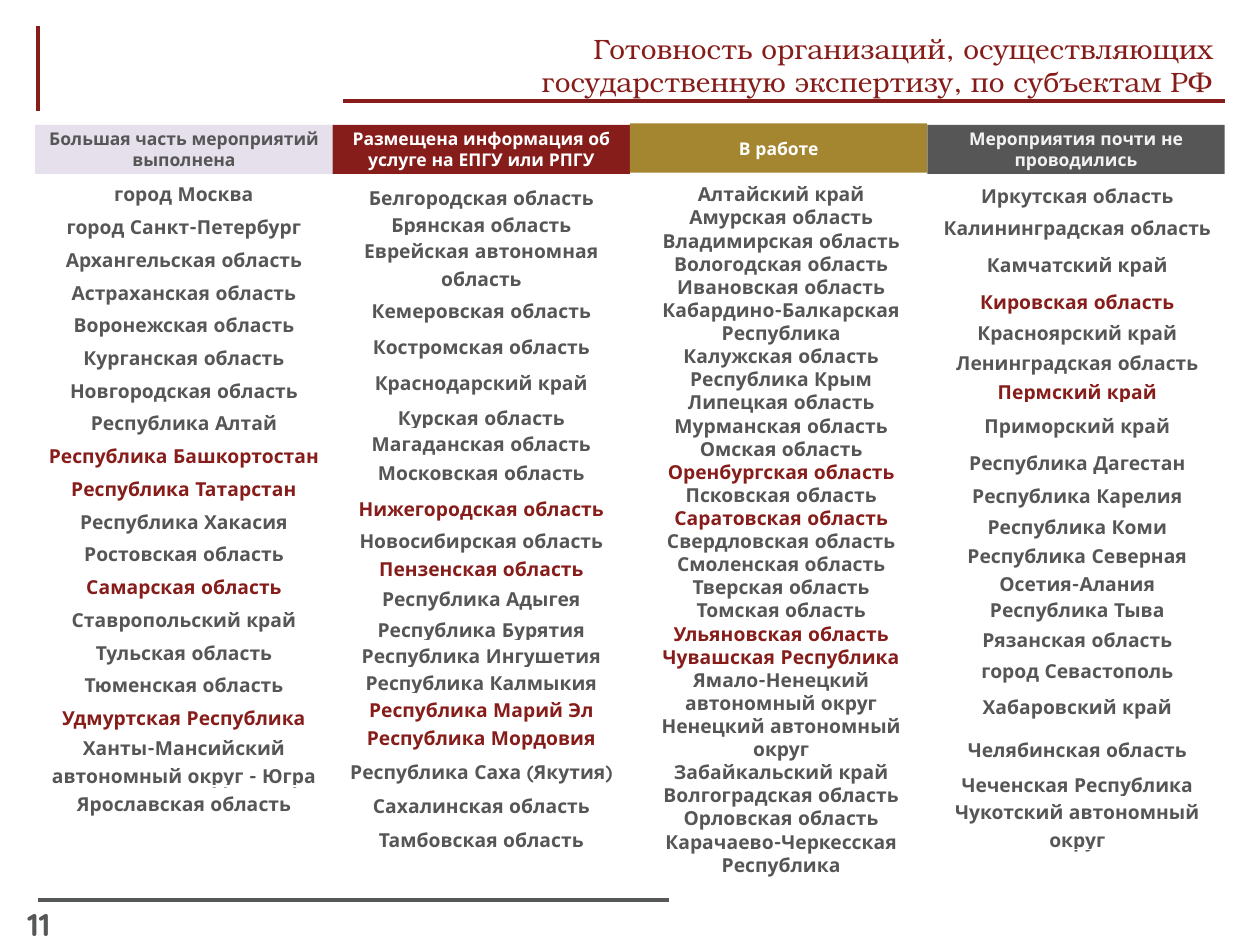
from dataclasses import dataclass

from lxml.etree import SubElement
from pptx import Presentation
from pptx.dml.color import RGBColor
from pptx.enum.shapes import MSO_CONNECTOR, MSO_SHAPE
from pptx.enum.text import MSO_ANCHOR, PP_ALIGN
from pptx.oxml.ns import qn
from pptx.util import Inches, Pt


@dataclass(frozen=True)
class Theme:
    red: str = "861D1A"
    gray: str = "575656"
    rule_gray: str = "565757"
    lilac: str = "E6E0EC"
    gold: str = "A3862F"
    white: str = "FFFFFF"
    pale: str = "F2F2F2"
    body_font: str = "Quicksand"
    title_font: str = "TeX Gyre Bonum"
    title_size: float = 16
    header_size: float = 10
    region_size: float = 11
    page_size: float = 18
    rule_width: float = 2.25


@dataclass(frozen=True)
class Rule:
    start: tuple[float, float]
    end: tuple[float, float]
    color: str


@dataclass(frozen=True)
class Header:
    label: str
    top: float
    fill: str
    color: str


@dataclass(frozen=True)
class RegionTable:
    left: float
    top: float
    side_inset: float
    heights: list[float]
    regions: list[str]


THEME = Theme()
LEFT, COLUMN, HEADER_HEIGHT = 0.28, 2.36, 0.39

RULES = [
    Rule((0.3, 0.21), (0.3, 0.88), THEME.red),
    Rule((0.3, 7.14), (5.31, 7.14), THEME.rule_gray),
    Rule((9.72, 0.8), (2.72, 0.8), THEME.red),
]
HEADERS = [
    Header("Большая часть мероприятий выполнена", 0.99, THEME.lilac, THEME.gray),
    Header("Размещена информация об услуге на ЕПГУ или РПГУ", 0.99, THEME.red, THEME.white),
    Header("В работе", 0.98, THEME.gold, THEME.white),
    Header("Мероприятия почти не проводились", 0.99, THEME.gray, THEME.pale),
]
HIGHLIGHTED = {
    "Республика Башкортостан", "Республика Татарстан", "Самарская область",
    "Удмуртская Республика", "Кировская область", "Пермский край",
    "Нижегородская область", "Пензенская область", "Республика Марий Эл",
    "Республика Мордовия", "Оренбургская область", "Саратовская область",
    "Ульяновская область", "Чувашская Республика",
}
MOSTLY_DONE = [
    "город Москва", "город Санкт-Петербург", "Архангельская область",
    "Астраханская область", "Воронежская область", "Курганская область",
    "Новгородская область", "Республика Алтай", "Республика Башкортостан",
    "Республика Татарстан", "Республика Хакасия", "Ростовская область",
    "Самарская область", "Ставропольский край", "Тульская область",
    "Тюменская область", "Удмуртская Республика",
    "Ханты-Мансийский автономный округ - Югра", "Ярославская область",
]
PUBLISHED = [
    "Белгородская область", "Брянская область", "Еврейская автономная область",
    "Кемеровская область", "Костромская область", "Краснодарский край",
    "Курская область", "Магаданская область", "Московская область",
    "Нижегородская область", "Новосибирская область", "Пензенская область",
    "Республика Адыгея", "Республика Бурятия", "Республика Ингушетия",
    "Республика Калмыкия", "Республика Марий Эл", "Республика Мордовия",
    "Республика Саха (Якутия)", "Сахалинская область", "Тамбовская область",
]
IN_PROGRESS = [
    "Алтайский край", "Амурская область", "Владимирская область",
    "Вологодская область", "Ивановская область", "Кабардино-Балкарская Республика",
    "Калужская область", "Республика Крым", "Липецкая область",
    "Мурманская область", "Омская область", "Оренбургская область",
    "Псковская область", "Саратовская область", "Свердловская область",
    "Смоленская область", "Тверская область", "Томская область",
    "Ульяновская область", "Чувашская Республика",
    "Ямало-Ненецкий автономный округ", "Ненецкий автономный округ",
    "Забайкальский край", "Волгоградская область", "Орловская область",
    "Карачаево-Черкесская Республика",
]
BARELY_STARTED = [
    "Иркутская область", "Калининградская область", "Камчатский край",
    "Кировская область", "Красноярский край", "Ленинградская область",
    "Пермский край", "Приморский край", "Республика Дагестан",
    "Республика Карелия", "Республика Коми", "Республика Северная Осетия-Алания",
    "Республика Тыва", "Рязанская область", "город Севастополь",
    "Хабаровский край", "Челябинская область", "Чеченская Республика",
    "Чукотский автономный округ",
]
TABLES = [
    RegionTable(LEFT, 1.4, 0.03, [0.26] * len(MOSTLY_DONE), MOSTLY_DONE),
    RegionTable(7.37, 1.41, 0.03,
                [0.27, 0.24, 0.34, 0.25, 0.24, 0.24, 0.08, 0.34, 0.25, 0.27,
                 0.23, 0.28, 0.24, 0.24, 0.24, 0.34, 0.34, 0.18, 0.34], BARELY_STARTED),
    RegionTable(2.64, 1.45, 0.02,
                [0.2, 0.2, 0.2, 0.33, 0.23, 0.34, 0.2, 0.2, 0.26, 0.3, 0.22,
                 0.22, 0.26, 0.2, 0.13, 0.2, 0.23, 0.22, 0.32, 0.2, 0.33], PUBLISHED),
]


def write(paragraph, text: str, size: float, color: str, align=PP_ALIGN.CENTER,
          font: str = THEME.body_font, bold: bool = True) -> None:
    paragraph.alignment = align
    run = paragraph.add_run()
    run.text = text
    for attribute, value in {"size": Pt(size), "name": font, "bold": bold}.items():
        setattr(run.font, attribute, value)
    run.font.color.rgb = RGBColor.from_string(color)


def write_region(paragraph, region: str) -> None:
    color = THEME.red if region in HIGHLIGHTED else THEME.gray
    write(paragraph, region, THEME.region_size, color)


def add_text_frame(slide, left: float, top: float, width: float, height: float):
    frame = slide.shapes.add_textbox(
        Inches(left), Inches(top), Inches(width), Inches(height)).text_frame
    frame.word_wrap = True
    return frame


def draw_rule(slide, rule: Rule) -> None:
    line = slide.shapes.add_connector(
        MSO_CONNECTOR.STRAIGHT, *map(Inches, rule.start + rule.end))
    line.line.color.rgb = RGBColor.from_string(rule.color)
    line.line.width = Pt(THEME.rule_width)
    SubElement(line._element.spPr, qn("a:effectLst"))


def draw_header(slide, column: int, header: Header) -> None:
    band = slide.shapes.add_shape(
        MSO_SHAPE.RECTANGLE, Inches(LEFT + column * COLUMN), Inches(header.top),
        Inches(COLUMN), Inches(HEADER_HEIGHT))
    band.shadow.inherit = False
    band.fill.solid()
    band.fill.fore_color.rgb = RGBColor.from_string(header.fill)
    band.line.fill.background()
    band.text_frame.word_wrap = True
    band.text_frame.vertical_anchor = MSO_ANCHOR.MIDDLE
    write(band.text_frame.paragraphs[0], header.label, THEME.header_size, header.color)


def draw_table(slide, content: RegionTable) -> None:
    table = slide.shapes.add_table(
        len(content.regions), 1, Inches(content.left), Inches(content.top),
        Inches(COLUMN), Inches(sum(content.heights))).table
    table.first_row = table.horz_banding = False
    cell_format = {
        "margin_left": Inches(content.side_inset), "margin_right": Inches(content.side_inset),
        "margin_top": 0, "margin_bottom": 0, "vertical_anchor": MSO_ANCHOR.MIDDLE,
    }
    for row, height, region in zip(table.rows, content.heights, content.regions):
        row.height = Inches(height)
        cell = row.cells[0]
        for attribute, value in cell_format.items():
            setattr(cell, attribute, value)
        cell.fill.background()
        paragraph = cell.text_frame.paragraphs[0]
        paragraph.line_spacing = 1.15
        write_region(paragraph, region)


def main() -> None:
    deck = Presentation()
    deck.slide_width, deck.slide_height = Inches(10), Inches(7.5)
    slide = deck.slides.add_slide(deck.slide_layouts[6])
    for rule in RULES:
        draw_rule(slide, rule)
    page = add_text_frame(slide, 0.12, 7.13, 0.63, 0.37)
    write(page.paragraphs[0], "11", THEME.page_size, THEME.rule_gray, PP_ALIGN.LEFT)
    for column, header in enumerate(HEADERS):
        draw_header(slide, column, header)
    for content in TABLES:
        draw_table(slide, content)
    title = add_text_frame(slide, 2.72, 0.2, 7.01, 0.64)
    write(title.paragraphs[0],
          "Готовность организаций, осуществляющих государственную экспертизу, по субъектам РФ",
          THEME.title_size, THEME.red, PP_ALIGN.RIGHT, THEME.title_font, False)
    progress = add_text_frame(slide, 5, 1.4, 2.4, 5.65)
    for index, region in enumerate(IN_PROGRESS):
        write_region(progress.add_paragraph() if index else progress.paragraphs[0], region)
    deck.save("out.pptx")


if __name__ == "__main__":
    main()
